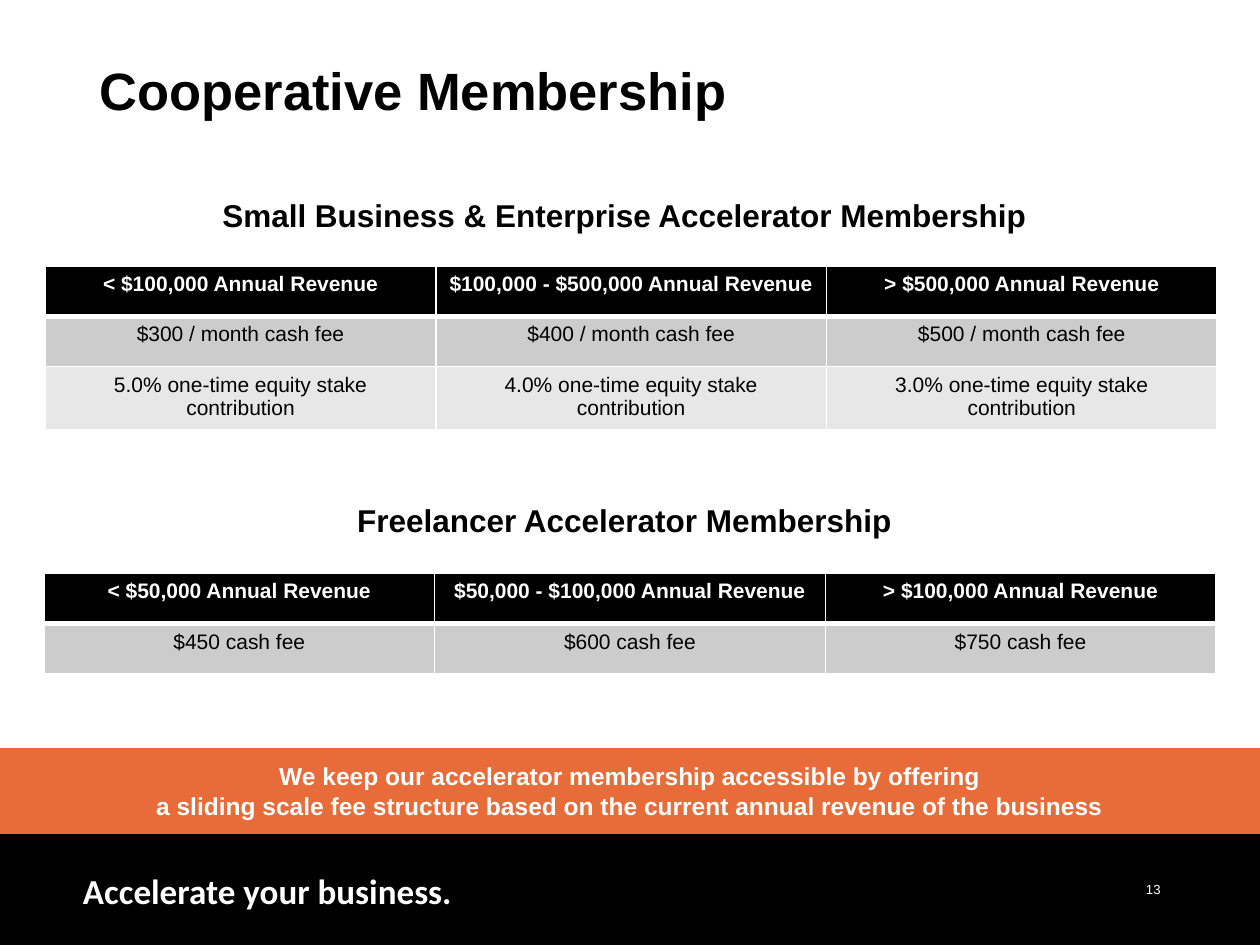
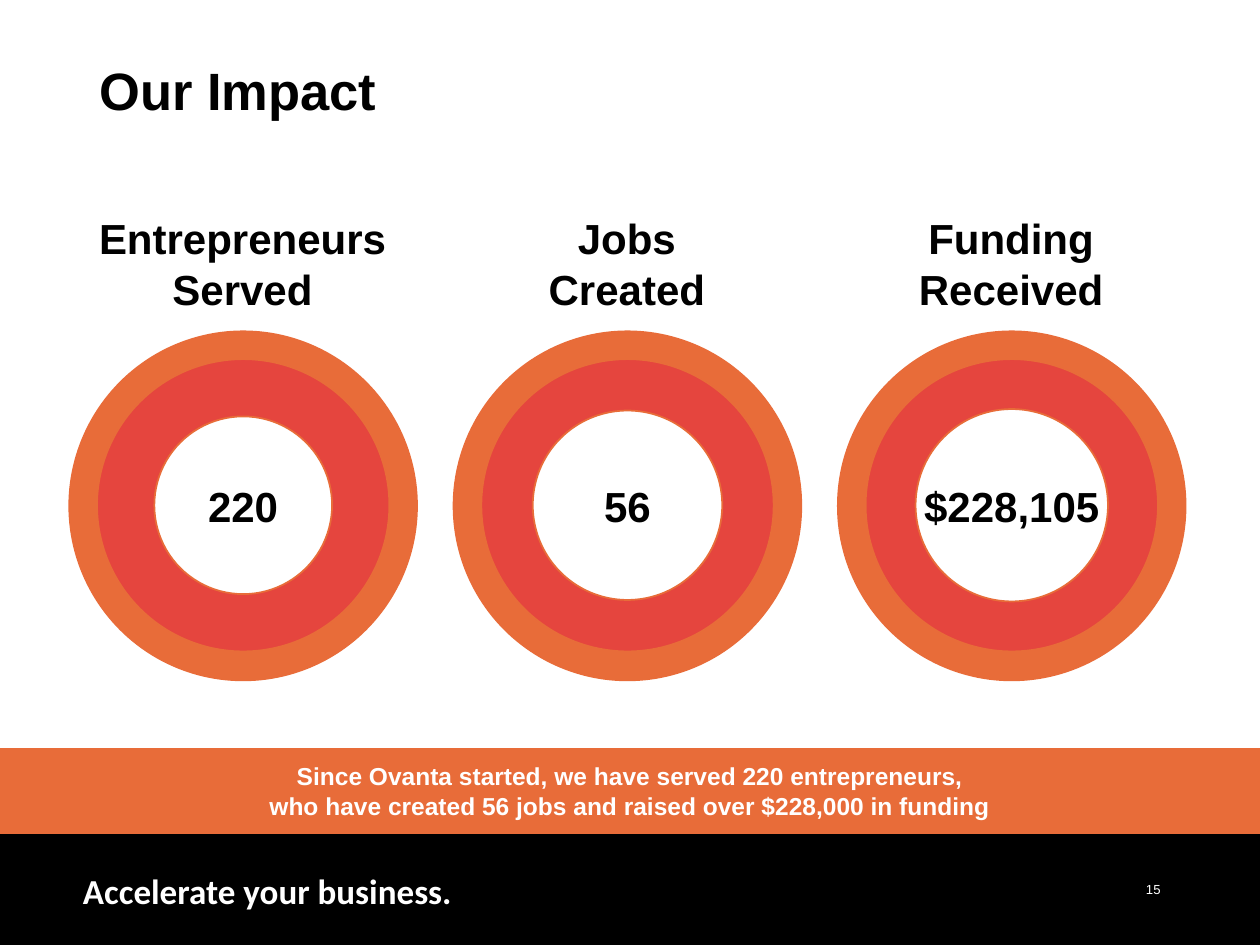
"""Build two slides on membership fees and impact."""
from lxml import etree
from pptx import Presentation
from pptx.dml.color import RGBColor
from pptx.enum.shapes import MSO_SHAPE
from pptx.enum.text import MSO_ANCHOR, MSO_AUTO_SIZE, PP_ALIGN
from pptx.oxml.ns import qn
from pptx.util import Inches, Pt

LEFT, MID, RIGHT = PP_ALIGN.LEFT, PP_ALIGN.CENTER, PP_ALIGN.RIGHT
CENTRE, TOP = MSO_ANCHOR.MIDDLE, MSO_ANCHOR.TOP
RECT, DONUT = MSO_SHAPE.RECTANGLE, MSO_SHAPE.DONUT
FIXED = MSO_AUTO_SIZE.NONE

BLACK, WHITE, ORANGE, RED = "000000", "FFFFFF", "E86C39", "E5453E"
ROWS = [BLACK, "CCCCCC", "E7E7E7"]

FEES = {
    "title": "Cooperative Membership",
    "band": "We keep our accelerator membership accessible by offering\n"
            "a sliding scale fee structure based on the current annual revenue of the business",
    "page": "13",
}
HEADS = ["Small Business & Enterprise Accelerator Membership",
         "Freelancer Accelerator Membership"]
GRIDS = [
    (0.36, 2.11, [
        ["< $100,000 Annual Revenue", "$100,000 - $500,000 Annual Revenue",
         "> $500,000 Annual Revenue"],
        ["$300 / month cash fee", "$400 / month cash fee", "$500 / month cash fee"],
        ["5.0% one-time equity stake contribution",
         "4.0% one-time equity stake contribution",
         "3.0% one-time equity stake contribution"],
    ]),
    (0.35, 4.55, [
        ["< $50,000 Annual Revenue", "$50,000 - $100,000 Annual Revenue",
         "> $100,000 Annual Revenue"],
        ["$450 cash fee", "$600 cash fee", "$750 cash fee"],
    ]),
]
IMPACT = {
    "title": "Our Impact",
    "band": "Since Ovanta started, we have served 220 entrepreneurs,\n"
            "who have created 56 jobs and raised over $228,000 in funding",
    "page": "15",
}
RINGS = [("Entrepreneurs\nServed", "220", 0.196),
         ("Jobs\nCreated", "56", 0.176),
         ("Funding\nReceived", "$228,105", 0.171)]

FONT = {"name": "Arial", "bold": True}
TITLE = {**FONT, "size": Pt(30)}
HEAD = {**FONT, "size": Pt(18)}
BAND = {**FONT, "size": Pt(14)}
LARGE = {**FONT, "size": Pt(24)}
CELL = {**FONT, "size": Pt(12)}
TAG = {"name": "Calibri", "bold": True, "size": Pt(20)}
PAGE = {"name": "Arial", "bold": False, "size": Pt(7.5)}


def rgb(code):
    """Turn a hex string into a colour."""
    return RGBColor.from_string(code)


def write(frame, text, font, color=BLACK, align=MID, **extra):
    """Fill a text frame and format each paragraph."""
    frame.text = text
    frame.word_wrap = True
    for para in frame.paragraphs:
        for key, val in {"alignment": align, **extra}.items():
            setattr(para, key, val)
        for key, val in font.items():
            setattr(para.font, key, val)
        para.font.color.rgb = rgb(color)


def place(shape, *box):
    """Move a placeholder to a box in inches."""
    for key, val in zip(("left", "top", "width", "height"), box):
        setattr(shape, key, Inches(val))


def draw(slide, kind, box, fill, line):
    """Add a flat preset shape."""
    shape = slide.shapes.add_shape(kind, *map(Inches, box))
    shape.shadow.inherit = False
    shape.fill.solid()
    shape.fill.fore_color.rgb = rgb(fill)
    shape.line.color.rgb = rgb(line)
    shape.line.width = Pt(1)
    shape.text_frame.vertical_anchor = CENTRE
    return shape


def label(slide, box, *args):
    """Add a text box."""
    write(slide.shapes.add_textbox(*map(Inches, box)).text_frame, *args)


def start(deck, kind, info):
    """Add a slide with the shared title, band and footer."""
    slide = deck.slides.add_slide(deck.slide_layouts[kind])
    title = slide.shapes.title
    place(title, 0.69, 0.4, 6.9, 0.68)
    write(title.text_frame, info["title"], TITLE, align=LEFT, line_spacing=0.9)
    title.text_frame.vertical_anchor = CENTRE
    title.text_frame.auto_size = FIXED
    draw(slide, RECT, (0, 6.62, 10, 0.88), BLACK, BLACK)
    label(slide, (0.56, 6.85, 3.31, 0.44), "Accelerate your business.", TAG, WHITE, LEFT)
    label(slide, (7.06, 6.95, 2.25, 0.4), info["page"], PAGE, WHITE, RIGHT)
    band = draw(slide, RECT, (0, 5.94, 10, 0.67), ORANGE, ORANGE)
    write(band.text_frame, info["band"], BAND, WHITE)
    return slide


def edge(cell, row):
    """Give a cell white borders, thick below the header."""
    props = cell._tc.get_or_add_tcPr()
    thick = {0: "B", 1: "T"}.get(row)
    for side in "LRTB":
        width = Pt(3 if side == thick else 1)
        line = etree.SubElement(props, qn("a:ln" + side), w=str(width))
        fill = etree.SubElement(line, qn("a:solidFill"))
        etree.SubElement(fill, qn("a:srgbClr"), val=WHITE)


def grid(slide, left, top, data):
    """Add a fee table."""
    box = left, top, 9.3, 0.4 * len(data)
    table = slide.shapes.add_table(len(data), len(data[0]), *map(Inches, box)).table
    for r, row in enumerate(data):
        for c, text in enumerate(row):
            cell = table.cell(r, c)
            edge(cell, r)
            cell.fill.solid()
            cell.fill.fore_color.rgb = rgb(ROWS[r])
            write(cell.text_frame, text, {**CELL, "bold": r == 0}, BLACK if r else WHITE)


def fees(deck):
    """Build the membership slide."""
    slide = start(deck, 1, FEES)
    body = slide.placeholders[1]
    place(body, 0.24, 1.54, 9.43, 4.24)
    frame = body.text_frame
    frame.text = "\n".join(HEADS)
    write(frame, frame.text, HEAD, line_spacing=0.9, space_before=Pt(0))
    frame.paragraphs[1].space_before = Pt(155)
    frame.vertical_anchor = TOP
    frame.auto_size = FIXED
    for para in frame.paragraphs:
        props = para._p.get_or_add_pPr()
        props.set("marL", "0")
        props.set("indent", "0")
        etree.SubElement(props, qn("a:buNone"))
        props.append(props.find(qn("a:defRPr")))
    for item in GRIDS:
        grid(slide, *item)


def impact(deck):
    """Build the ring slide."""
    slide = start(deck, 5, IMPACT)
    for i, (name, value, hole) in enumerate(RINGS):
        left = 0.55 + 3.05 * i
        label(slide, (left + 0.09, 1.64, 2.57, 0.91), name, LARGE)
        outer = draw(slide, DONUT, (left, 2.63, 2.76, 2.77), ORANGE, ORANGE)
        inner = draw(slide, DONUT, (left + 0.22, 2.85, 2.32, 2.32), RED, ORANGE)
        for ring in (outer, inner):
            ring.adjustments[0] = hole
        write(outer.text_frame, value, LARGE)


def main():
    """Build and save the deck."""
    deck = Presentation()
    deck.slide_width, deck.slide_height = Inches(10), Inches(7.5)
    fees(deck)
    impact(deck)
    deck.save("out.pptx")


if __name__ == "__main__":
    main()
